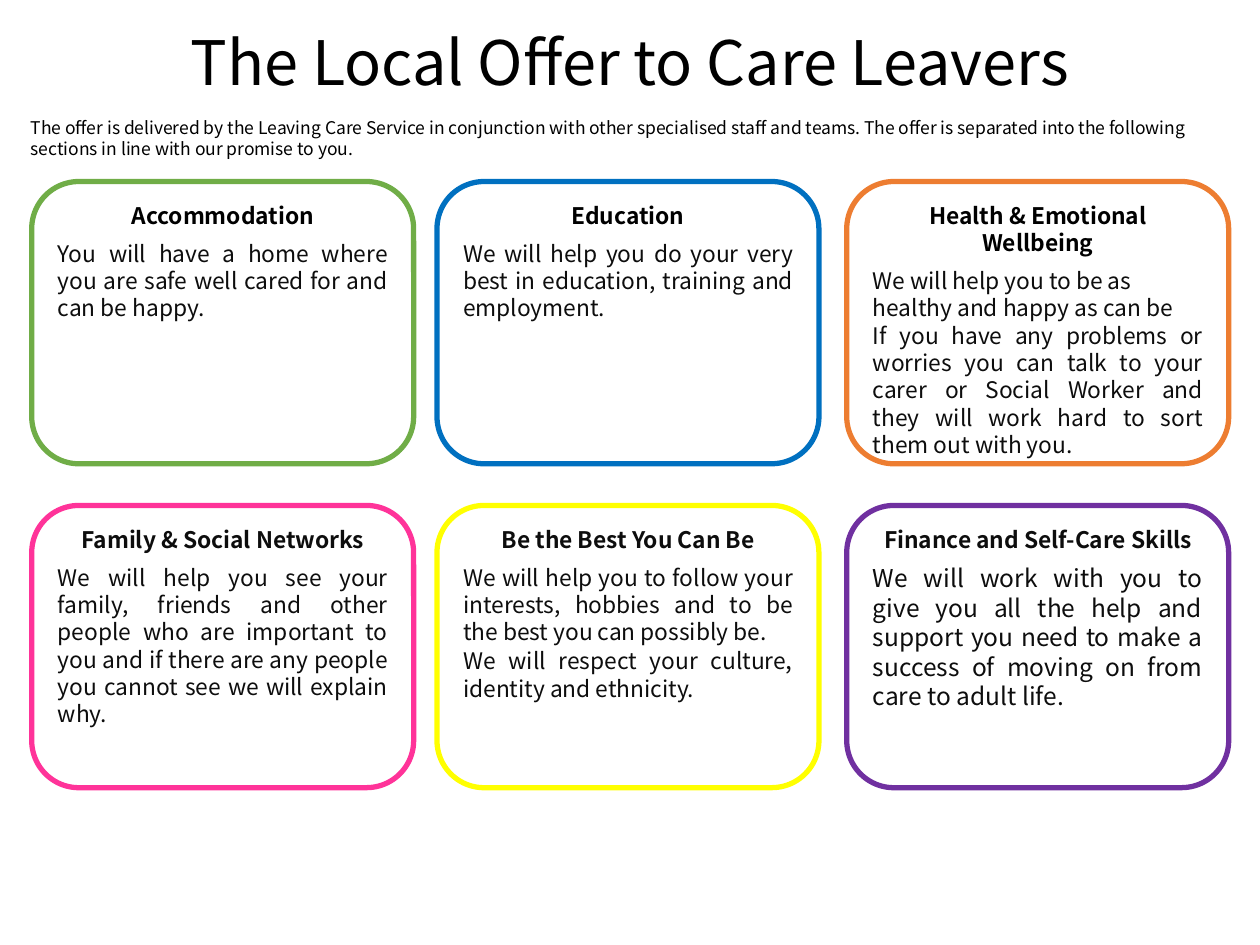
from itertools import product

from pptx import Presentation
from pptx.dml.color import RGBColor
from pptx.enum.shapes import MSO_SHAPE
from pptx.enum.text import MSO_ANCHOR, PP_ALIGN
from pptx.util import Cm, Pt

FONT = "Noto Sans CJK KR"
BLACK, INK = "000000", "0D0D0D"
LEFT, CENTER, JUSTIFY = PP_ALIGN.LEFT, PP_ALIGN.CENTER, PP_ALIGN.JUSTIFY

# Card grid in cm
COLUMNS, ROWS = (0.64, 8.81, 17.07), (3.66, 10.19)
CARD_W, CARD_H = 7.7, 5.69

# Border colour, heading, heading colour, paragraphs as (alignment, [(text, size)])
CARDS = [
    ("70AD47", "Accommodation", BLACK, [
        (JUSTIFY, [("You will have a home where you are safe well cared for and can be happy.", 13)])]),
    ("0070C0", "Education", BLACK, [
        (JUSTIFY, [("We will help you do your very best in education, training and employment.", 13)])]),
    ("ED7D31", "Health & Emotional Wellbeing", BLACK, [
        (LEFT, [("We will help you to be as healthy and happy as can be", 13)]),
        (JUSTIFY, [("If you have any problems or worries you can talk to your carer or Social "
                    "Worker and they will work hard to sort them out with you.", 13)])]),
    ("FF3399", "Family & Social Networks", INK, [
        (JUSTIFY, [("We will help you see your family, friends and other people who are important "
                    "to you and if there are any people you cannot see we will explain why.", 13)])]),
    ("FFFF00", "Be the Best You Can Be", INK, [
        (JUSTIFY, [("We will help you to follow your interests, hobbies and to be the best you "
                    "can possibly be.", 13)]),
        (JUSTIFY, [("We will respect your culture", 13), (", ", 14),
                   ("identity and ethnicity.", 13)])]),
    ("7030A0", "Finance and Self-Care Skills", INK, [
        (JUSTIFY, [("We will work with you to give you all the help and support you need to make "
                    "a success of moving on from care to adult life.", 14)])]),
]


def rgb(value):
    return RGBColor.from_string(value)


def set_attrs(obj, values):
    for name, value in values.items():
        setattr(obj, name, value)


def write_paragraph(p, runs, color, bold=False, **layout):
    set_attrs(p, {"line_spacing": 1.0, "space_before": Pt(0), "space_after": Pt(0), **layout})
    for text, size in runs:
        r = p.add_run()
        r.text = text
        set_attrs(r.font, {"name": FONT, "size": Pt(size), "bold": bold})
        r.font.color.rgb = rgb(color)


def add_text(s, box, text, size, align):
    tf = s.shapes.add_textbox(*map(Cm, box)).text_frame
    tf.word_wrap = True
    write_paragraph(tf.paragraphs[0], [(text, size)], BLACK, alignment=align)


def add_header(s, left, top, width):
    # Title across the slide, introduction below it
    add_text(s, (left, top, width, 1.83), "The Local Offer to Care Leavers", 35, CENTER)
    add_text(s, (left + 0.37, top + 1.88, width - 0.79, 1.8),
             "The offer is delivered by the Leaving Care Service in conjunction with other "
             "specialised staff and teams. The offer is separated into the following sections "
             "in line with our promise to you.", 10, LEFT)


def add_card(s, box, border, heading, heading_color, paragraphs):
    # Rounded frame
    sp = s.shapes.add_shape(MSO_SHAPE.ROUNDED_RECTANGLE, *map(Cm, box))
    sp.shadow.inherit = False
    sp.adjustments[0] = 0.167
    sp.fill.solid()
    sp.fill.fore_color.rgb = rgb("FFFFFF")
    sp.line.color.rgb = rgb(border)
    sp.line.width = Pt(3)

    # Heading and body
    tf = sp.text_frame
    set_attrs(tf, {"word_wrap": True, "vertical_anchor": MSO_ANCHOR.TOP})
    write_paragraph(tf.paragraphs[0], [(heading, 13)], heading_color, bold=True,
                    alignment=CENTER, space_after=Pt(6))
    for align, runs in paragraphs:
        write_paragraph(tf.add_paragraph(), runs, INK, alignment=align)


def main():
    prs = Presentation()
    set_attrs(prs, {"slide_width": Cm(25.4), "slide_height": Cm(19.05)})
    s = prs.slides.add_slide(prs.slide_layouts[6])
    add_header(s, 0, 0.36, 25.4)
    for (top, left), card in zip(product(ROWS, COLUMNS), CARDS):
        add_card(s, (left, top, CARD_W, CARD_H), *card)
    prs.save("out.pptx")


if __name__ == "__main__":
    main()
